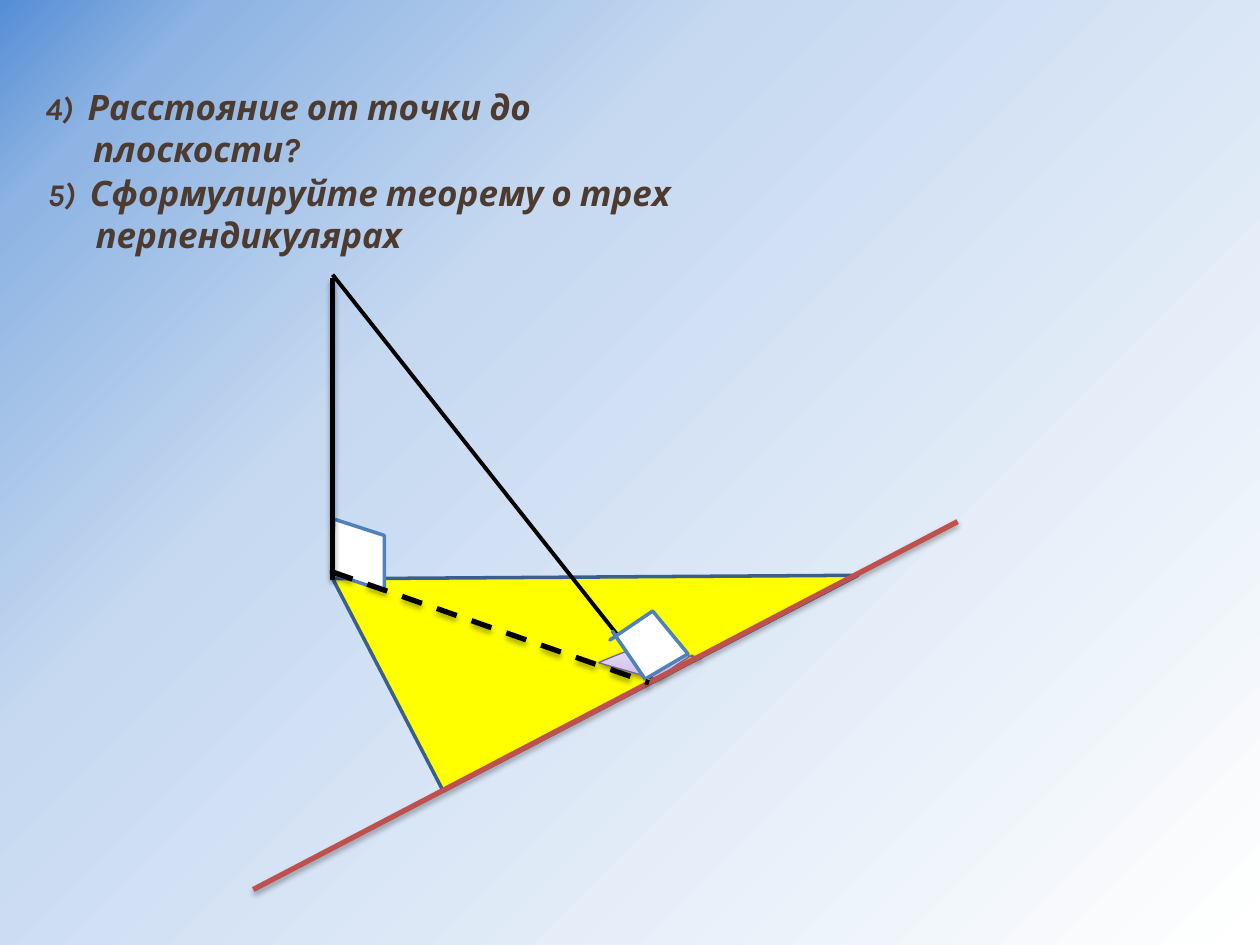
from lxml.etree import SubElement
from pptx import Presentation
from pptx.dml.color import RGBColor
from pptx.enum.dml import MSO_LINE
from pptx.enum.shapes import MSO_CONNECTOR, MSO_SHAPE
from pptx.oxml.ns import qn
from pptx.util import Inches, Pt

FONT = "Karla"
BROWN, BLACK, WHITE = "4E3B30", "000000", "FFFFFF"
BLUE, RED = "4F81BD", "C0504D"


def color(hex_text):
    return RGBColor.from_string(hex_text)


def add_element(parent, tag, **attributes):
    return SubElement(parent, qn(tag), {k: str(v) for k, v in attributes.items()})


def set_gradient(fill, owner, stops):
    """Fill with (percent, colour) stops; return the element awaiting its direction."""
    fill.gradient()
    gradient = owner.xpath(".//a:gradFill")[0]
    for child in list(gradient):
        gradient.remove(child)
    stop_list = add_element(gradient, "a:gsLst")
    for percent, hex_text in stops:
        stop = add_element(stop_list, "a:gs", pos=percent * 1000)
        add_element(stop, "a:srgbClr", val=hex_text)
    return gradient


def set_effects(shape, opacity=0, distance=0):
    """Replace the theme shadow with a downward one, or with none at zero opacity."""
    effects = add_element(shape._element.spPr, "a:effectLst")
    if opacity:
        shadow = add_element(effects, "a:outerShdw", blurRad=Pt(3.1), dist=Pt(distance),
                             dir=5400000, rotWithShape=0)
        shadow_color = add_element(shadow, "a:srgbClr", val=BLACK)
        add_element(shadow_color, "a:alpha", val=opacity * 1000)


def set_line(shape, hex_text, width):
    shape.line.color.rgb = color(hex_text)
    shape.line.width = Pt(width)


def add_background(slide):
    background = slide.background
    stops = [(0, "558ED5"), (10, "8EB4E3"), (34, "C6D9F1"), (100, WHITE)]
    gradient = set_gradient(background.fill, slide._element, stops)
    path = add_element(gradient, "a:path", path="circle")
    add_element(path, "a:fillToRect", r=100000, b=100000)


def add_question(slide, left, top, width, number, wording):
    box = slide.shapes.add_textbox(*map(Inches, (left, top, width, 0.44)))
    box.text_frame.word_wrap = True
    paragraph = box.text_frame.paragraphs[0]
    properties = paragraph._p.get_or_add_pPr()
    properties.set("marL", str(Inches(0.38)))
    properties.set("indent", str(Inches(-0.38)))
    for text, size in ((f"{number})  ", 18), (wording, 20)):
        run = paragraph.add_run()
        run.text = text
        font = run.font
        font.name, font.size = FONT, Pt(size)
        font.bold = font.italic = True
        font.color.rgb = color(BROWN)


def add_segment(slide, start, end, hex_text, width, shadow=True, dashed=False):
    segment = slide.shapes.add_connector(MSO_CONNECTOR.STRAIGHT, *map(Inches, start + end))
    set_line(segment, hex_text, width)
    if dashed:
        segment.line.dash_style = MSO_LINE.DASH
    set_effects(segment, *((35, 1.8) if shadow else ()))


def add_outline(slide, points):
    points = [(Inches(x), Inches(y)) for x, y in points]
    builder = slide.shapes.build_freeform(*points[0])
    builder.add_line_segments(points[1:], close=True)
    return builder.convert_to_shape()


def add_right_angle_mark(slide, points):
    mark = add_outline(slide, points)
    mark.fill.solid()
    mark.fill.fore_color.rgb = color(WHITE)
    set_line(mark, BLUE, 2)
    set_effects(mark)


def add_plane_triangle(slide):
    triangle = slide.shapes.add_shape(MSO_SHAPE.RIGHT_TRIANGLE,
                                      *map(Inches, (2.87, 3.63, 3.71, 1.9)))
    triangle.rotation = 332.5
    triangle.fill.solid()
    triangle.fill.fore_color.rgb = color("FFFF00")
    set_line(triangle, "3A5F8C", 2)
    set_effects(triangle)


def add_curved_mark(slide):
    """Draw the control polygon, then turn each three line segments into a curve."""
    mark = add_outline(slide, [
        (4.75, 5.26),
        (5.14, 5.09), (5.28, 5.09), (5.12, 5.09),
        (5.53, 5.22), (5.65, 5.28), (5.49, 5.2),
        (5.18, 5.39), (5.3, 5.38), (5.17, 5.38)])
    path = mark._element.xpath(".//a:path")[0]
    segments = path.findall(qn("a:lnTo"))[:9]
    for first in range(0, 9, 3):
        curve = add_element(path, "a:cubicBezTo")
        segments[first].addprevious(curve)
        for segment in segments[first:first + 3]:
            curve.append(segment[0])
            path.remove(segment)
    stops = [(0, "C9B5E8"), (35, "D8CBEE"), (100, "F0EAF9")]
    gradient = set_gradient(mark.fill, mark._element, stops)
    add_element(gradient, "a:lin", ang=270 * 60000, scaled=1)
    set_line(mark, "7D60A0", 0.75)
    set_effects(mark, 38, 1.6)


def main():
    presentation = Presentation()
    presentation.slide_width, presentation.slide_height = Inches(10), Inches(7.5)
    slide = presentation.slides.add_slide(presentation.slide_layouts[6])
    add_background(slide)
    add_question(slide, 0.26, 0.63, 4.85, 4, "Расстояние от точки до плоскости?")
    add_question(slide, 0.28, 1.31, 6.48, 5, "Сформулируйте теорему о трех перпендикулярах")

    add_plane_triangle(slide)
    add_curved_mark(slide)
    add_segment(slide, (2.64, 2.18), (5.17, 5.38), BLACK, 2.25, shadow=False)
    add_right_angle_mark(slide, [(4.86, 5.01), (5.12, 5.39), (5.46, 5.19),
                                 (5.18, 4.85), (4.84, 5.08), (4.89, 5.05)])
    add_segment(slide, (2.01, 7.06), (7.6, 4.14), RED, 3)
    add_right_angle_mark(slide, [(2.63, 4.55), (3.05, 4.69), (3.05, 4.25), (2.65, 4.12)])
    add_segment(slide, (2.64, 2.21), (2.64, 4.6), BLACK, 3)
    add_segment(slide, (2.64, 4.54), (5.15, 5.42), BLACK, 3, dashed=True)
    presentation.save("out.pptx")


if __name__ == "__main__":
    main()
